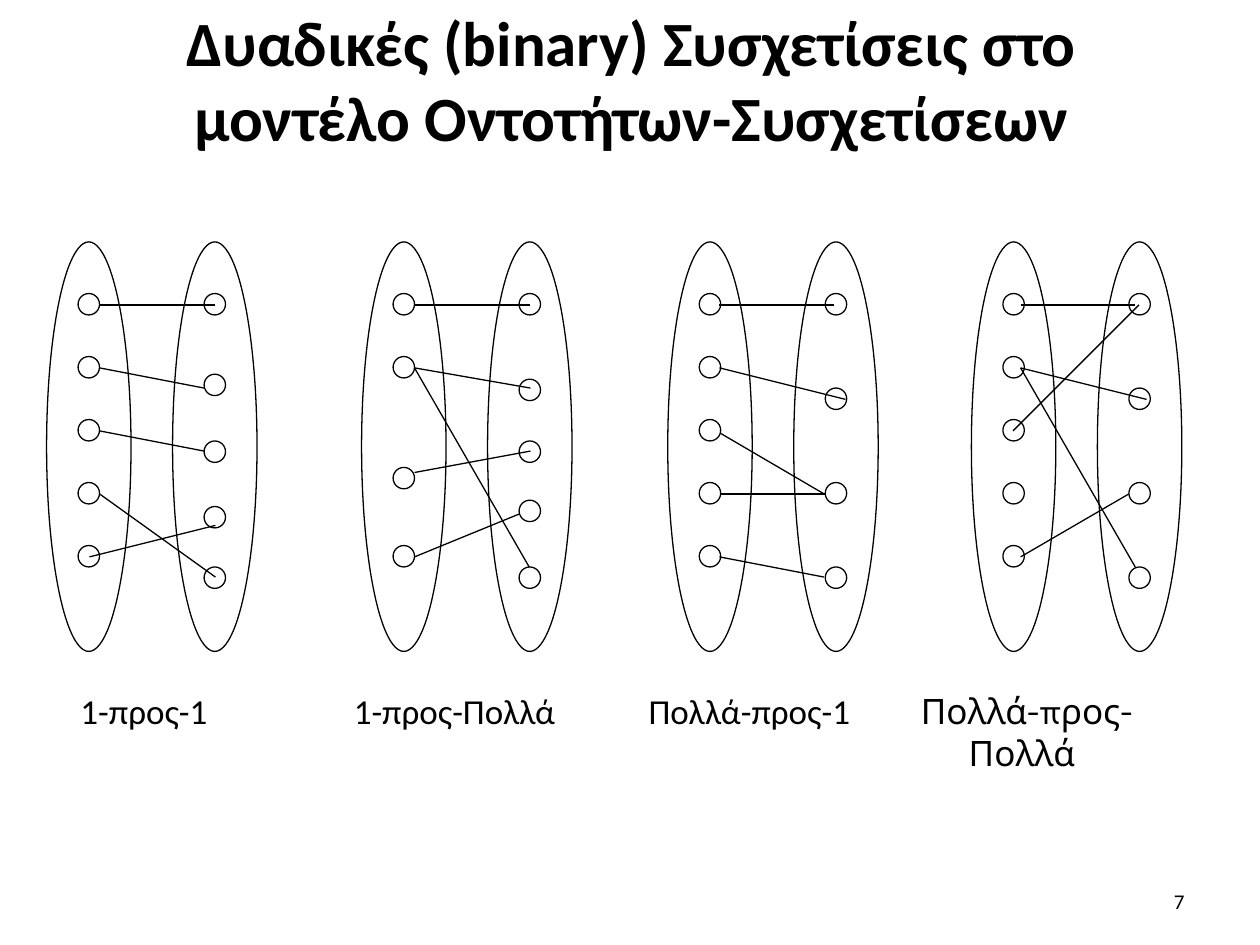
from dataclasses import dataclass

from lxml.etree import SubElement
from pptx import Presentation
from pptx.dml.color import RGBColor
from pptx.enum.shapes import MSO_CONNECTOR as Connector, MSO_SHAPE as Shape
from pptx.enum.text import MSO_ANCHOR as Anchor, MSO_AUTO_SIZE as AutoSize, PP_ALIGN as Align
from pptx.oxml.ns import qn
from pptx.util import Inches, Pt


@dataclass(frozen=True)
class Theme:
    ink: RGBColor = RGBColor(0, 0, 0)
    paper: RGBColor = RGBColor(255, 255, 255)
    font: str = "Calibri"
    alternate_font: str = "Karla"
    title: Pt = Pt(36)
    caption: Pt = Pt(20)
    page_number: Pt = Pt(12)
    line: Pt = Pt(0.75)


@dataclass(frozen=True)
class Relation:
    left: float
    left_members: tuple
    right_members: tuple
    links: tuple


THEME = Theme()
SET_TOP, SET_WIDTH, SET_HEIGHT, SET_STEP = 1.92, 0.67, 3.25, 1
MEMBER_INSET, MEMBER_SIZE = 0.25, 0.17
HANGING = 0.38
EVEN_MEMBERS = (2.33, 2.83, 3.33, 3.83, 4.33)

MANY_TO_MANY = Relation(7.71, EVEN_MEMBERS, (2.33, 3.08, 3.83, 4.5), (
    (0.39, 2.42, 1.3, 2.42), (0.39, 2.92, 1.39, 3.17), (0.39, 4.42, 1.25, 3.92),
    (0.39, 2.92, 1.3, 4.5), (1.33, 2.42, 0.33, 3.42)))
MANY_TO_ONE = Relation(5.3, EVEN_MEMBERS, (2.33, 3.08, 3.83, 4.5), (
    (0.41, 2.42, 1.32, 2.42), (0.41, 2.92, 1.41, 3.17), (0.41, 4.42, 1.24, 4.58),
    (0.42, 3.92, 1.25, 3.92), (0.42, 3.44, 1.24, 3.92)))
ONE_TO_ONE = Relation(0.37, EVEN_MEMBERS, (2.33, 2.97, 3.5, 4.02, 4.5), (
    (0.42, 2.42, 1.34, 2.42), (0.42, 2.92, 1.25, 3.08), (0.34, 4.42, 1.34, 4.17),
    (0.42, 3.92, 1.34, 4.58), (0.42, 3.42, 1.25, 3.58)))
ONE_TO_MANY = Relation(2.87, (2.33, 2.83, 3.71, 4.33), (2.33, 3.01, 3.5, 3.97, 4.5), (
    (0.42, 2.42, 1.34, 2.42), (0.42, 2.92, 1.34, 3.08), (0.42, 4.42, 1.25, 4.08),
    (0.42, 2.92, 1.33, 4.5), (0.42, 3.75, 1.34, 3.58)))

CAPTIONS = (
    ("1-προς-1", 0.54, 1.42, THEME.font),
    ("1-προς-Πολλά", 2.71, 2, THEME.font),
    ("Πολλά-προς-1", 5.05, 2, THEME.font),
    ("Πολλά-προς-Πολλά", 7.21, 2.58, THEME.alternate_font),
)


def write(shape, text, size, align, anchor, font=THEME.font, bold=False):
    frame = shape.text_frame
    frame.text = text
    frame.word_wrap = True
    frame.auto_size = AutoSize.NONE
    frame.vertical_anchor = anchor
    paragraph = frame.paragraphs[0]
    paragraph.alignment = align
    style = paragraph.runs[0].font
    style.name, style.size, style.bold = font, size, bold
    style.color.rgb = THEME.ink
    return paragraph


def place_title(slide, text):
    title = slide.shapes.title
    title.left, title.top = Inches(0.51), Inches(0.13)
    title.width, title.height = Inches(9), Inches(0.99)
    write(title, text, THEME.title, Align.CENTER, Anchor.MIDDLE, bold=True)


def add_caption(slide, text, left, width, font):
    box = slide.shapes.add_textbox(Inches(left), Inches(5.42), Inches(width), Inches(0.5))
    paragraph = write(box, text, THEME.caption, Align.LEFT, Anchor.TOP, font)
    properties = paragraph._p.get_or_add_pPr()
    properties.set("marL", str(Inches(HANGING)))
    properties.set("indent", str(-Inches(HANGING)))


def add_page_number(slide, text):
    box = slide.shapes.add_textbox(Inches(7.17), Inches(6.95), Inches(2.33), Inches(0.4))
    write(box, text, THEME.page_number, Align.RIGHT, Anchor.MIDDLE)


def add_ellipse(group, left, top, width, height, filled):
    ellipse = group.shapes.add_shape(
        Shape.OVAL, Inches(left), Inches(top), Inches(width), Inches(height))
    ellipse.shadow.inherit = False
    if filled:
        ellipse.fill.solid()
        ellipse.fill.fore_color.rgb = THEME.paper
    else:
        ellipse.fill.background()
    ellipse.line.color.rgb = THEME.ink
    ellipse.line.width = THEME.line


def add_link(group, x1, y1, x2, y2):
    link = group.shapes.add_connector(
        Connector.STRAIGHT, Inches(x1), Inches(y1), Inches(x2), Inches(y2))
    link.line.color.rgb = THEME.ink
    link.line.width = THEME.line
    SubElement(link._element.spPr, qn("a:effectLst"))


def add_relation(slide, relation):
    group = slide.shapes.add_group_shape()
    for column, members in enumerate((relation.left_members, relation.right_members)):
        left = relation.left + column * SET_STEP
        add_ellipse(group, left, SET_TOP, SET_WIDTH, SET_HEIGHT, filled=False)
        for top in members:
            add_ellipse(group, left + MEMBER_INSET, top, MEMBER_SIZE, MEMBER_SIZE, filled=True)
    for x1, y1, x2, y2 in relation.links:
        add_link(group, relation.left + x1, y1, relation.left + x2, y2)


def main():
    presentation = Presentation()
    presentation.slide_width, presentation.slide_height = Inches(10), Inches(7.5)
    slide = presentation.slides.add_slide(presentation.slide_layouts[5])
    place_title(slide, "Δυαδικές (binary) Συσχετίσεις στο μοντέλο Οντοτήτων-Συσχετίσεων")
    for caption in CAPTIONS:
        add_caption(slide, *caption)
    for relation in (MANY_TO_MANY, MANY_TO_ONE, ONE_TO_ONE, ONE_TO_MANY):
        add_relation(slide, relation)
    add_page_number(slide, "7")
    presentation.save("out.pptx")


if __name__ == "__main__":
    main()
